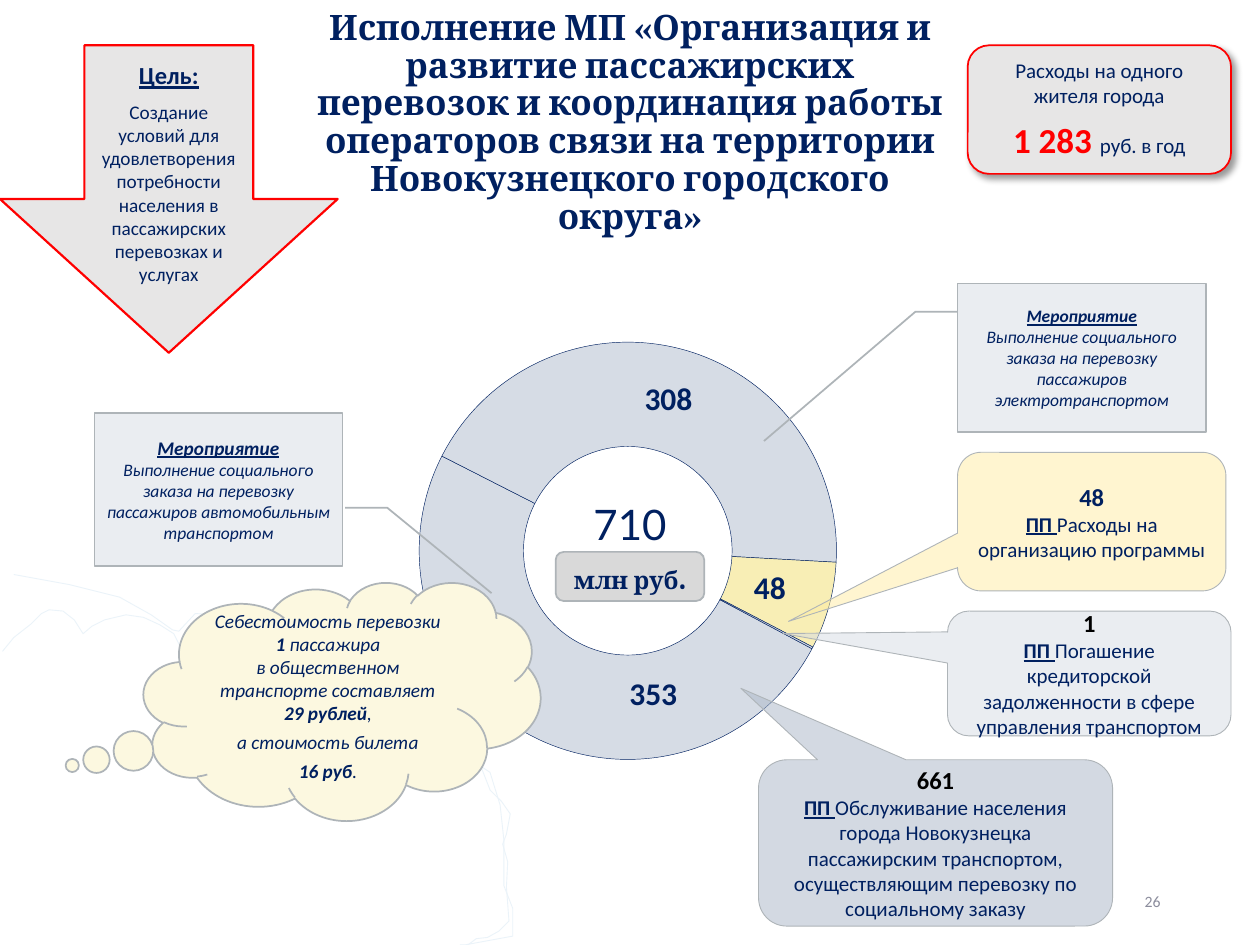
from lxml.etree import SubElement
from pptx import Presentation
from pptx.chart.data import CategoryChartData
from pptx.dml.color import RGBColor
from pptx.enum.chart import XL_CHART_TYPE
from pptx.enum.shapes import MSO_SHAPE
from pptx.enum.text import MSO_ANCHOR, PP_ALIGN
from pptx.oxml import parse_xml
from pptx.oxml.ns import nsdecls, qn
from pptx.util import Inches, Pt


class Theme:
    navy, red, black, muted = "002060", "FF0000", "000000", "8C8D9D"
    gray, badge, outline, river = "E7E6E6", "D9D9D9", "AEB4B8", "EBF3F9"
    blue, steel, yellow, sand, cloud = "D6DCE5", "ADB9CA", "FFEDA3", "F8EEB5", "FCF8E0"
    body, serif, total = "Calibri", "Cambria", "Lato"
    note, small, text, head, big, title, sum = 10, 11, 12, 14, 18, 20, 24


def write(s, paras, anchor=MSO_ANCHOR.MIDDLE, font=Theme.body, italic=False, before=0, align=PP_ALIGN.CENTER):
    tf = s.text_frame
    tf.word_wrap = True
    tf.vertical_anchor = anchor
    for i, runs in enumerate(paras):
        p = tf.add_paragraph() if i else tf.paragraphs[0]
        p.alignment = align
        p.space_before = Pt(before)
        p.font.name = font
        p.font.italic = italic
        for text, size, style, color in runs:
            for j, line in enumerate(text.split("\n")):
                if j:
                    p.add_line_break()
                if line:
                    r = p.add_run()
                    r.text = line
                    r.font.size = Pt(size)
                    r.font.bold = "b" in style
                    r.font.underline = "u" in style
                    r.font.color.rgb = RGBColor.from_string(color)
    return tf


def add_box(kind, box, fill, line=Theme.outline, width=1, adj=(), alpha=None):
    s = shapes.add_shape(kind, *map(Inches, box))
    s.shadow.inherit = False
    s.fill.solid()
    s.fill.fore_color.rgb = RGBColor.from_string(fill)
    s.line.color.rgb = RGBColor.from_string(line)
    s.line.width = Pt(width)
    for i, value in enumerate(adj):
        s.adjustments[i] = value
    if alpha:
        color = s.element.spPr.find(qn("a:solidFill"))[0]
        SubElement(color, qn("a:alpha"), val=str(alpha * 1000))
    return s


prs = Presentation()
prs.slide_width, prs.slide_height = Inches(10), Inches(7.5)
shapes = prs.slides.add_slide(prs.slide_layouts[6]).shapes

s = shapes.add_textbox(Inches(2.4), Inches(0.36), Inches(5.2), Inches(1.57))
title = "Исполнение МП «Организация и развитие пассажирских перевозок и координация работы операторов связи на территории Новокузнецкого городского округа»"
tf = write(s, [[(title, Theme.title, "b", Theme.navy)]], MSO_ANCHOR.BOTTOM, Theme.serif)
tf.paragraphs[0].line_spacing = 0.9

data = CategoryChartData(number_format="0")
data.categories = ["1", "2", "3", "4"]
data.add_series("Series 1", [353, 308, 48, 1])
chart = shapes.add_chart(XL_CHART_TYPE.DOUGHNUT, Inches(2.85), Inches(2.57), Inches(4.31), Inches(3.64), data).chart
chart.has_legend = chart.has_title = False
chart.font.name = Theme.body
chart.font.size = Pt(Theme.big)
chart.font.color.rgb = RGBColor.from_string(Theme.navy)
plot = chart.plots[0]
plot.vary_by_categories = True
series = plot.series[0]
series.data_labels.show_value = False
for i, color in enumerate([Theme.blue, Theme.blue, Theme.sand, Theme.blue]):
    point = series.points[i]
    point.format.fill.solid()
    point.format.fill.fore_color.rgb = RGBColor.from_string(color)
    point.format.line.color.rgb = RGBColor.from_string(Theme.navy)
    point.format.line.width = Pt(0.25)
    if i < 2:
        font = point.data_label.font
        font.name = Theme.body
        font.size = Pt(Theme.big)
        font.bold = True
        font.color.rgb = RGBColor.from_string(Theme.navy)
area = chart.element.find(".//" + qn("c:plotArea"))
for tag, value in [("c:firstSliceAng", "118"), ("c:holeSize", "39")]:
    area.find(".//" + qn(tag)).set("val", value)
for layout in area.findall(qn("c:layout")):
    area.remove(layout)
label = area.find(".//" + qn("c:dLbl"))
plot_layout = [("layoutTarget", "inner"), ("xMode", "edge"), ("yMode", "edge"),
               ("x", "0.11"), ("y", "0.04"), ("w", "0.77"), ("h", "0.91")]
label_layout = [("x", "0.18"), ("y", "0.01")]
for parent, index, settings in [(area, 0, plot_layout), (label, 1, label_layout)]:
    layout = parse_xml(f'<c:layout {nsdecls("c")}><c:manualLayout/></c:layout>')
    for tag, value in settings:
        SubElement(layout[0], qn("c:" + tag), val=value)
    parent.insert(index, layout)

s = shapes.add_textbox(Inches(7.06), Inches(6.95), Inches(2.25), Inches(0.4))
write(s, [[("26", Theme.note - 1, "", Theme.muted)]], align=PP_ALIGN.RIGHT)
s = shapes.add_textbox(Inches(4.31), Inches(3.91), Inches(1.38), Inches(0.5))
write(s, [[("710", Theme.sum, "", Theme.navy)]], font=Theme.total, before=6)

programs = [
    ((7.52, 4.85, 2.25, 0.99), (-1.08, -0.32, 0.17), Theme.blue, 50, "1", Theme.black,
     "Погашение кредиторской задолженности в сфере управления транспортом"),
    ((7.6, 3.59, 2.13, 1.1), (-1.13, 0.72, 0.17), Theme.yellow, 50, "48", Theme.navy,
     "Расходы на организацию программы"),
    ((6.02, 6.03, 2.81, 1.32), (-0.55, -0.93, 0.17), Theme.steel, 53, "661", Theme.black,
     "Обслуживание населения города Новокузнецка пассажирским транспортом, осуществляющим перевозку по социальному заказу"),
]
for box, adj, fill, alpha, amount, color, text in programs:
    s = add_box(MSO_SHAPE.ROUNDED_RECTANGULAR_CALLOUT, box, fill, width=0.5, adj=adj, alpha=alpha)
    write(s, [[(amount, Theme.head, "b", color)],
              [("ПП ", Theme.text, "bu", Theme.navy), (text, Theme.text, "", Theme.navy)]])

events = [
    ((0.75, 3.28, 1.97, 1.21), (0.62, -0.01, 0.62, -0.18, 1.18, -0.6), True, Theme.small, "автомобильным транспортом"),
    ((7.6, 2.25, 1.97, 1.18), (0.19, 0, 0.19, -0.17, 1.06, -0.78), False, Theme.note, "электротранспортом"),
]
for box, adj, flip, size, transport in events:
    s = add_box(MSO_SHAPE.LINE_CALLOUT_2, box, Theme.blue, adj=adj, alpha=50)
    if flip:
        s.element.spPr.find(qn("a:xfrm")).set("flipH", "1")
    write(s, [[("Мероприятие", size, "bu", Theme.navy)],
              [("Выполнение социального заказа на перевозку пассажиров " + transport, Theme.note, "", Theme.navy)]],
          italic=True)

rivers = [
    [(0.11, 4.56), (0.55, 4.64), (0.95, 4.74), (1.2, 4.88), (1.37, 5), (1.42, 5.01), (1.55, 4.87),
     (1.72, 4.88), (1.83, 4.94), (1.93, 5.22), (2.09, 5.39), (2.18, 5.35), (2.49, 5.43), (2.9, 5.71),
     (2.85, 5.84), (2.94, 6.03), (3.38, 5.93), (3.68, 5.99), (3.89, 6.13), (3.97, 6.39), (4, 6.67),
     (4, 7.03), (4.07, 7.21), (4.07, 7.43), (3.69, 7.5), (3.65, 7.5)],
    [(0.02, 5.17), (0.11, 5.06), (0.25, 4.95), (0.33, 4.87), (0.39, 4.84), (0.5, 4.85), (0.59, 4.92),
     (0.66, 5.03), (0.73, 4.97), (0.83, 4.92), (1, 4.88), (1.14, 4.9), (1.27, 4.96), (1.38, 5.03),
     (1.43, 5.13), (1.5, 5.1), (1.75, 5.03), (1.83, 5.04), (1.95, 5.1), (2.08, 5.23), (2.18, 5.38),
     (2.25, 5.51), (2.37, 5.51), (2.48, 5.45), (2.63, 5.51), (2.82, 5.62), (2.92, 5.65), (2.99, 5.78),
     (3, 5.9), (3.06, 5.88), (3.21, 5.81), (3.39, 5.82), (3.53, 5.92), (3.57, 6.03), (3.74, 6.04),
     (3.82, 6.09), (3.89, 6.27), (3.98, 6.36), (4.05, 6.46), (4.02, 6.62), (3.99, 6.7), (4.03, 6.84),
     (4.02, 7.04), (4.04, 7.31), (3.96, 7.39), (3.87, 7.44), (3.78, 7.45), (3.7, 7.51)],
]
for river in rivers:
    points = [(Inches(x), Inches(y)) for x, y in river]
    builder = shapes.build_freeform(*points[0])
    builder.add_line_segments(points[1:], close=False)
    s = builder.convert_to_shape()
    s.shadow.inherit = False
    s.fill.background()
    s.line.color.rgb = RGBColor.from_string(Theme.river)
    s.line.width = Pt(0.5)

s = add_box(MSO_SHAPE.DOWN_ARROW, (0, 0.36, 2.68, 2.44), Theme.gray, Theme.red, 1.25)
goal = "Создание условий для удовлетворения потребности населения в пассажирских перевозках и услугах"
tf = write(s, [[("Цель:", Theme.head, "bu", Theme.navy)], [(goal, Theme.small, "", Theme.navy)]], MSO_ANCHOR.TOP)
tf.margin_top = Inches(0.12)
tf.paragraphs[1].space_before = Pt(6)

s = add_box(MSO_SHAPE.ROUNDED_RECTANGLE, (7.68, 0.36, 2.09, 1.02), Theme.gray, Theme.red)
write(s, [[("Расходы на одного жителя города", Theme.text, "", Theme.navy)],
          [("1 283 ", Theme.title, "b", Theme.red), ("руб. в год", Theme.text, "", Theme.navy)]],
      MSO_ANCHOR.TOP, before=6)
effects = s.element.spPr.find(qn("a:effectLst"))
shadow = SubElement(effects, qn("a:outerShdw"), blurRad=str(Pt(4)), dist=str(Pt(3)), dir="2700000", algn="tl")
color = SubElement(shadow, qn("a:srgbClr"), val=Theme.black)
SubElement(color, qn("a:alpha"), val="40000")

s = add_box(MSO_SHAPE.ROUNDED_RECTANGLE, (4.41, 4.38, 1.18, 0.39), Theme.badge)
write(s, [[("млн руб", Theme.head, "b", Theme.navy), (".", Theme.big, "b", Theme.navy)]], font=Theme.serif)

s = shapes.add_textbox(Inches(5.88), Inches(4.46), Inches(0.46), Inches(0.4))
tf = write(s, [[("48", Theme.big, "b", Theme.navy)]], MSO_ANCHOR.TOP)
tf.word_wrap = False

s = add_box(MSO_SHAPE.CLOUD_CALLOUT, (1.14, 4.62, 3.15, 1.89), Theme.cloud, adj=(-0.68, 0.27))
fares = [
    [("Себестоимость перевозки\n", ""), ("1", "b"), (" пассажира\nв общественном транспорте составляет\n", ""),
     ("29 рублей", "b"), (",", "")],
    [("а стоимость билета", "")],
    [("16 руб", "b"), (".", "")],
]
write(s, [[(text, Theme.small, style, Theme.navy) for text, style in fare] for fare in fares], italic=True, before=3.3)

prs.save("out.pptx")
